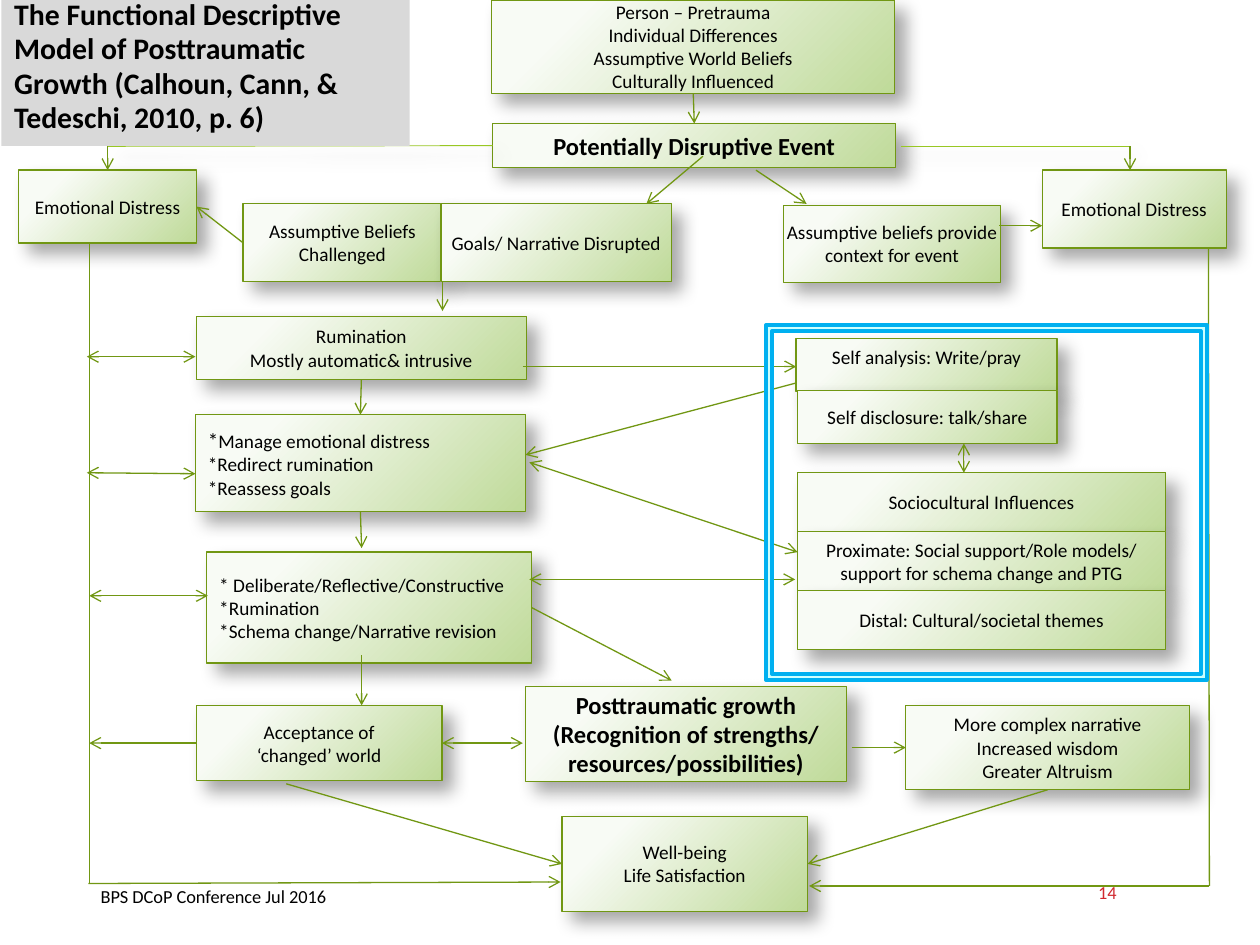
from lxml import etree
from pptx import Presentation
from pptx.dml.color import RGBColor
from pptx.enum.shapes import MSO_CONNECTOR, MSO_SHAPE
from pptx.enum.text import MSO_ANCHOR, MSO_AUTO_SIZE, PP_ALIGN
from pptx.oxml import parse_xml
from pptx.oxml.ns import nsdecls, qn
from pptx.util import Cm, Pt

RECT, FRAME = MSO_SHAPE.RECTANGLE, MSO_SHAPE.FRAME
STRAIGHT = MSO_CONNECTOR.STRAIGHT
LEFT_AL, MID_AL = PP_ALIGN.LEFT, PP_ALIGN.CENTER
HIGH, MID, LOW = MSO_ANCHOR.TOP, MSO_ANCHOR.MIDDLE, MSO_ANCHOR.BOTTOM
NO_FIT = MSO_AUTO_SIZE.NONE
TOP, LEFT, BOTTOM, RIGHT = range(4)

BLACK = RGBColor(0x00, 0x00, 0x00)
GREEN = RGBColor(0x71, 0x97, 0x13)
LIME = RGBColor(0x98, 0xC7, 0x23)
PALE = RGBColor(0xF8, 0xFB, 0xF5)
LEAF = RGBColor(0xBF, 0xDA, 0x99)
GREY = RGBColor(0xD9, 0xD9, 0xD9)
RED = RGBColor(0xD1, 0x28, 0x2E)
BLUE = RGBColor(0x00, 0xB0, 0xF0)
AQUA = RGBColor(0xCC, 0xFF, 0xFF)

GRAD = f"""<a:gradFill {nsdecls("a")} rotWithShape="1"><a:gsLst>
<a:gs pos="20000"><a:srgbClr val="{PALE}"/></a:gs>
<a:gs pos="100000"><a:srgbClr val="{LEAF}"/></a:gs></a:gsLst>
<a:path path="circle"><a:fillToRect l="-15000" t="-15000" r="115000" b="115000"/></a:path>
</a:gradFill>"""
SHADE = f"""<a:outerShdw {nsdecls("a")} blurRad="129540" dist="101600" dir="2700000"
 algn="tl" rotWithShape="0"><a:srgbClr val="{BLACK}"><a:alpha val="35000"/></a:srgbClr>
</a:outerShdw>"""


def assign(item, values):
    for name, value in values.items():
        setattr(item, name, value)


class Chart:
    """Flow chart style and the slide it is drawn on."""

    font = {"name": "Calibri", "size": Pt(11), "bold": False}

    def __init__(self, slide):
        self.slide = slide
        self.shapes = slide.shapes
        self.boxes = {}

    def put_text(self, shape, lines, frame, align=MID_AL, color=BLACK, gap=None, **font):
        text = shape.text_frame
        assign(text, {"auto_size": NO_FIT, **frame})
        for i, line in enumerate(lines):
            para = text.paragraphs[0] if i == 0 else text.add_paragraph()
            para.alignment = align
            if gap:
                para.line_spacing = 0.8
                para.space_before = gap if i else Pt(0)
            parts = line if isinstance(line, tuple) else ((line, {}),)
            for words, extra in parts:
                run = para.add_run()
                run.text = words
                assign(run.font, {**self.font, **font, **extra})
                run.font.color.rgb = color

    def title(self, place, lines):
        shape = self.shapes.title
        assign(shape, dict(zip(("left", "top", "width", "height"), map(Cm, place))))
        shape.fill.solid()
        shape.fill.fore_color.rgb = GREY
        self.put_text(shape, lines, {"vertical_anchor": HIGH, "word_wrap": True},
                      LEFT_AL, gap=Pt(3.4), size=Pt(17), bold=True)
        self.shapes._spTree.append(shape._element)  # above the side line

    def label(self, place, words, anchor, **style):
        shape = self.shapes.add_textbox(*map(Cm, place))
        self.put_text(shape, [words], {"vertical_anchor": anchor, "word_wrap": True},
                      size=Pt(10.5), **style)

    def box(self, name, place, lines, low=0.13, **style):
        shape = self.shapes.add_shape(RECT, *map(Cm, place))
        shape.fill.background()
        props = shape._element.spPr
        props.replace(props.find(qn("a:noFill")), parse_xml(GRAD))
        shape.line.color.rgb = GREEN
        shape.line.width = Pt(0.75)
        shape.shadow.inherit = False
        props.find(qn("a:effectLst")).append(parse_xml(SHADE))
        frame = {"vertical_anchor": MID, "word_wrap": False, "margin_bottom": Cm(low)}
        self.put_text(shape, lines, frame, **style)
        self.boxes[name] = shape

    def line(self, start, end, tips="", color=GREEN, width=0.75, shade=False):
        """An end is a point in cm, or a box name and a side to join."""
        joins = [isinstance(spot[0], str) for spot in (start, end)]
        spots = [(0, 0) if joined else spot for joined, spot in zip(joins, (start, end))]
        link = self.shapes.add_connector(STRAIGHT, *map(Cm, spots[0] + spots[1]))
        if joins[0]:
            link.begin_connect(self.boxes[start[0]], start[1])
        if joins[1]:
            link.end_connect(self.boxes[end[0]], end[1])
        link.line.color.rgb = color
        link.line.width = Pt(width)
        props = link._element.spPr
        for mark, tag in (("<", "a:headEnd"), (">", "a:tailEnd")):
            if mark in tips:
                etree.SubElement(props.find(qn("a:ln")), qn(tag), type="arrow")
        glow = etree.SubElement(props, qn("a:effectLst"))
        if shade:
            glow.append(parse_xml(SHADE))

    def frame(self, place):
        shape = self.shapes.add_shape(FRAME, *map(Cm, place))
        shape.adjustments[0] = 0.017
        shape.fill.solid()
        shape.fill.fore_color.rgb = AQUA
        shape.line.color.rgb = BLUE
        shape.line.width = Pt(2)
        shape.shadow.inherit = False


def main():
    deck = Presentation()
    deck.slide_width, deck.slide_height = Cm(25.4), Cm(19.05)
    chart = Chart(deck.slides.add_slide(deck.slide_layouts[5]))
    big = {"size": Pt(14), "bold": True}

    # Event and first reactions
    chart.box("person", (9.91, 0, 8.13, 1.88), [
        "Person – Pretrauma", "Individual Differences",
        "Assumptive World Beliefs", "Culturally Influenced"])
    chart.box("event", (9.93, 2.49, 8.13, 0.89), ["Potentially Disruptive Event"], **big)
    chart.box("beliefs", (4.9, 4.11, 4.01, 1.57), ["Assumptive Beliefs", "Challenged"])
    chart.box("goals", (8.89, 4.11, 4.65, 1.57), ["Goals/ Narrative Disrupted"])
    chart.box("context", (15.8, 4.14, 4.37, 1.55),
              ["Assumptive beliefs provide", "context for event"])
    chart.box("left", (0.38, 3.43, 3.58, 1.47), ["Emotional Distress"])
    chart.box("right", (21.01, 3.43, 3.71, 1.57), ["Emotional Distress"])

    # Rumination and growth
    chart.box("think", (3.96, 6.38, 6.65, 1.27),
              ["Rumination", "Mostly automatic& intrusive"])
    chart.box("manage", (3.94, 8.36, 6.65, 1.96), [
        (("*", {"size": Pt(12)}), ("Manage emotional distress", {})),
        "*Redirect rumination", "*Reassess goals"], align=LEFT_AL)
    chart.box("schema", (4.17, 11.13, 6.55, 2.24), [
        "* Deliberate/Reflective/Constructive", "*Rumination",
        "*Schema change/Narrative revision"], align=LEFT_AL)
    chart.box("accept", (3.96, 14.22, 4.95, 1.52), ["Acceptance of", "‘changed’ world"])
    chart.box("growth", (10.59, 13.84, 6.48, 1.91), [
        "Posttraumatic growth", "(Recognition of strengths/",
        "resources/possibilities)"], **big)
    chart.box("wisdom", (18.26, 14.22, 5.72, 1.7),
              ["More complex narrative", "Increased wisdom", "Greater Altruism"])
    chart.box("life", (11.33, 16.46, 4.95, 1.91), ["Well-being", "Life Satisfaction"])

    # Self and social influences
    chart.box("self", (16.05, 6.83, 5.26, 1.07), ["Self analysis: Write/pray"], low=0.46)
    chart.box("talk", (16.08, 7.87, 5.23, 1.07), ["Self disclosure: talk/share"])
    social = {
        "social": ["Sociocultural Influences"],
        "near": ["Proximate: Social support/Role models/",
                 "support for schema change and PTG"],
        "far": ["Distal: Cultural/societal themes"],
    }
    for i, (name, lines) in enumerate(social.items()):
        chart.box(name, (16.08, 9.53 + 1.19 * i, 7.42, 1.19), lines)

    # Side lines from the event
    thin = {"color": LIME, "width": 0.5, "shade": True}
    chart.line((18.16, 2.95), (22.78, 2.95), **thin)
    chart.line((2.17, 2.95), ("event", LEFT), **thin)

    # Arrows and plain lines
    for link in (
        (("person", BOTTOM), ("event", TOP), ">"),
        ((14.17, 3.15), (13.03, 4.11), ">"),
        ((15.24, 3.43), (16.26, 4.11), ">"),
        ((2.17, 2.95), ("left", TOP), ">"),
        ((22.78, 2.95), (22.78, 3.43), ">"),
        (("beliefs", LEFT), ("left", RIGHT), ">"),
        ((20.14, 4.55), (21.01, 4.55), ">"),
        ((8.92, 5.66), (8.92, 6.27), ">"),
        (("think", BOTTOM), ("manage", TOP), ">"),
        (("manage", BOTTOM), (7.29, 11.05), ">"),
        ((7.29, 13.21), (7.29, 14.22), ">"),
        ((1.75, 7.19), (3.94, 7.19), "<>"),
        ((1.75, 9.53), (3.94, 9.55), "<>"),
        ((1.8, 12.01), (4.19, 12.01), "<>"),
        (("accept", LEFT), (1.8, 14.98), ">"),
        (("accept", RIGHT), (10.54, 14.98), "<>"),
        ((17.17, 15.07), ("wisdom", LEFT), ">"),
        (("schema", RIGHT), (13.54, 13.72), ">"),
        ((10.54, 7.39), (16.05, 7.39), ">"),
        ((16.05, 7.72), (10.59, 9.17), ">"),
        ((16.08, 11.13), (10.67, 9.32), "<>"),
        ((16.03, 11.68), (10.67, 11.68), "<>"),
        ((19.43, 8.94), (19.43, 9.53), "<>"),
        ((5.77, 15.8), ("life", LEFT), ">"),
        (("wisdom", BOTTOM), ("life", RIGHT), ">"),
        ((1.8, 4.9), (1.8, 17.81)),
        ((1.78, 17.81), (11.3, 17.78), ">"),
        ((24.36, 5), (24.38, 17.86)),
        ((24.38, 17.86), (16.31, 17.86), ">"),
    ):
        chart.line(*link)

    # Footer, title and blue frame
    chart.label((21.59, 17.78, 1.47, 0.43), "14", MID, color=RED)
    chart.label((1.78, 17.98, 7.85, 0.43), "BPS DCoP Conference Jul 2016", LOW, align=LEFT_AL)
    chart.title((0.03, -0.08, 8.23, 3.02), [
        "The Functional Descriptive", "Model of Posttraumatic",
        "Growth (Calhoun, Cann, &", "Tedeschi, 2010, p. 6)"])
    chart.frame((15.44, 6.55, 8.89, 7.16))
    deck.save("out.pptx")


if __name__ == "__main__":
    main()
